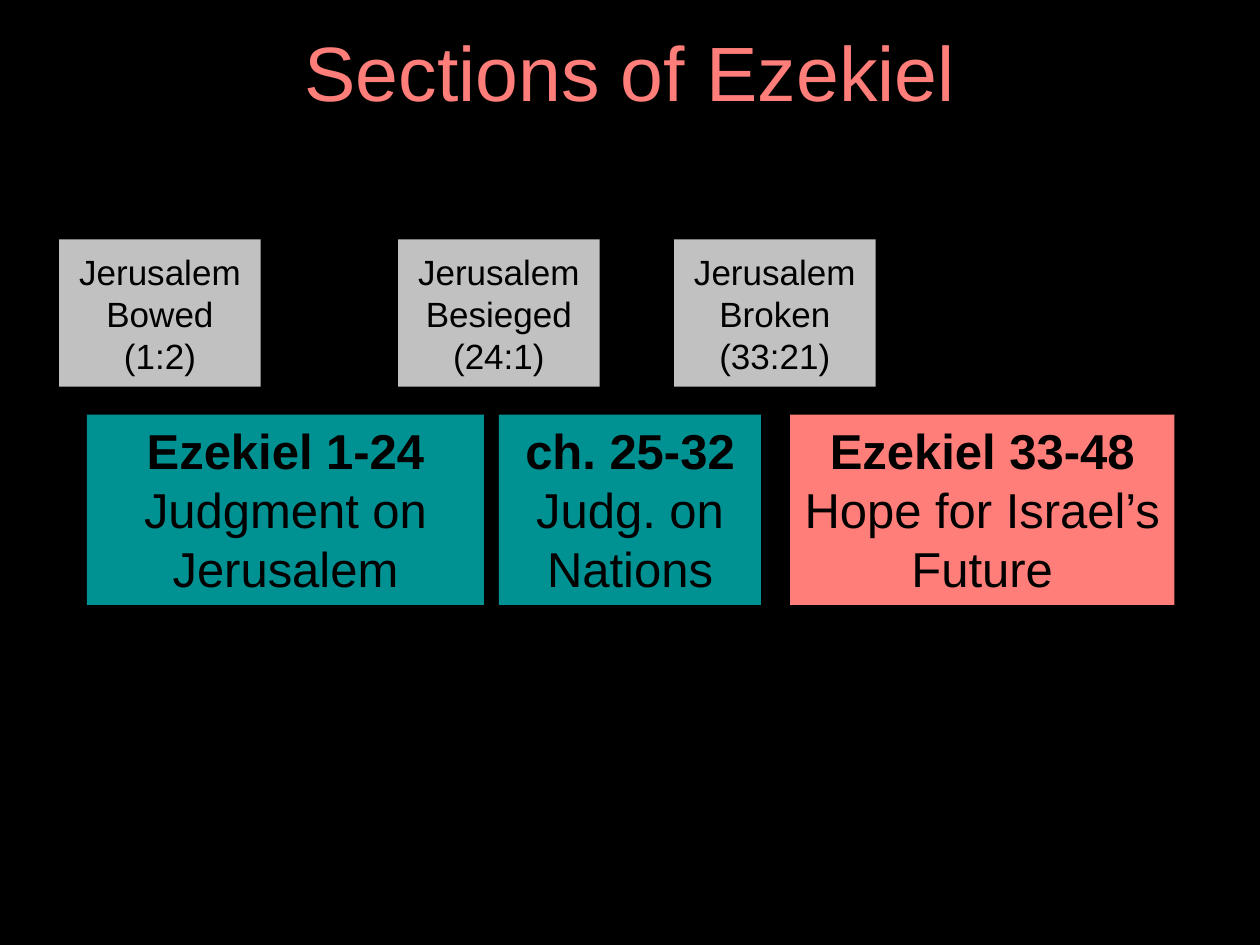
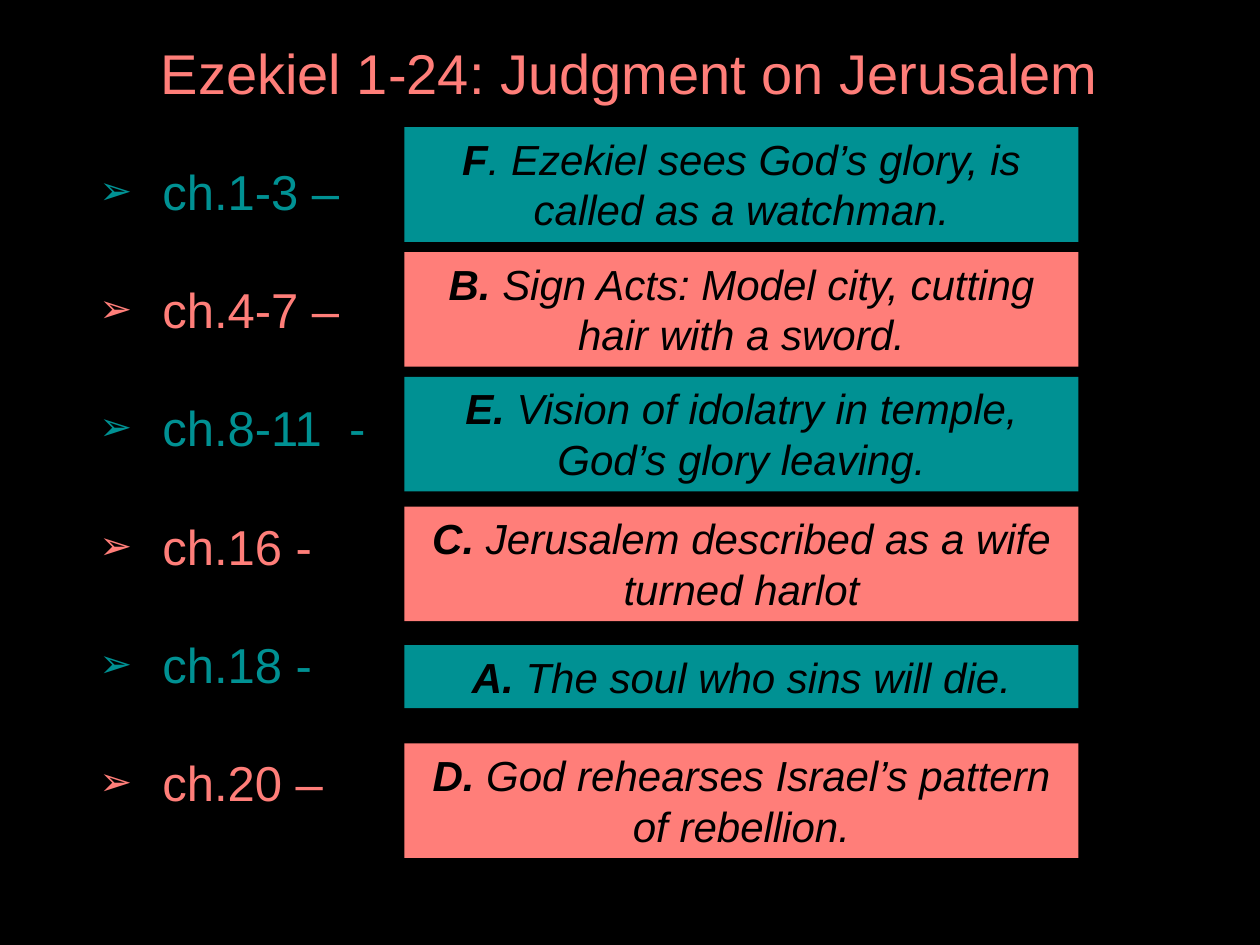
from dataclasses import dataclass
from itertools import cycle

from lxml.etree import SubElement
from pptx import Presentation
from pptx.dml.color import RGBColor
from pptx.enum.shapes import MSO_SHAPE
from pptx.enum.text import MSO_ANCHOR, MSO_AUTO_SIZE, PP_ALIGN
from pptx.oxml.ns import qn
from pptx.slide import Slide
from pptx.text.text import TextFrame, _Paragraph, _Run
from pptx.util import Inches, Pt

COLORS = {
    "black": "000000",
    "teal": "009193",
    "coral": "FF7E79",
    "grey": "C1C1C1",
}
FONT = "Arial"
CONTENT_LEFT, CONTENT_WIDTH = 0.69, 8.62


@dataclass
class Span:
    text: str
    bold: bool = False
    italic: bool = False


@dataclass
class Box:
    left: float
    top: float
    width: float
    height: float
    fill: str
    size: int
    lines: list[list[Span]]
    centred: bool = False


@dataclass
class Event:
    left: float
    name: str
    verse: str


@dataclass
class Section:
    left: float
    width: float
    fill: str
    chapters: str
    theme: str


@dataclass
class Passage:
    chapters: str
    top: float
    height: float
    letter: str
    summary: str


EVENTS = [
    Event(5.35, "Jerusalem Broken", "(33:21)"),
    Event(3.16, "Jerusalem Besieged", "(24:1)"),
    Event(0.47, "Jerusalem Bowed", "(1:2)"),
]
SECTIONS = [
    Section(0.69, 3.15, "teal", "Ezekiel 1-24", "Judgment on Jerusalem"),
    Section(3.96, 2.08, "teal", "ch. 25-32", "Judg. on Nations"),
    Section(6.27, 3.05, "coral", "Ezekiel 33-48", "Hope for Israel’s Future"),
]
PASSAGES = [
    Passage("ch.1-3 –", 1.01, 0.91, "F", ". Ezekiel sees God’s glory, is called as a watchman."),
    Passage("ch.4-7 –", 2, 0.91, "B. ", "Sign Acts: Model city, cutting hair with a sword."),
    Passage("ch.8-11  -", 2.99, 0.91, "E. ", "Vision of idolatry in temple, God’s glory leaving."),
    Passage("ch.16 -", 4.02, 0.91, "C. ", "Jerusalem described as a wife turned harlot"),
    Passage("ch.18 -", 5.12, 0.5, "A. ", "The soul who sins will die."),
    Passage("ch.20 –", 5.9, 0.91, "D. ", "God rehearses Israel’s pattern of rebellion."),
]


def rgb(name: str) -> RGBColor:
    return RGBColor.from_string(COLORS[name])


def format_run(run: _Run, size: int, color: str, bold: bool = False, italic: bool = False) -> None:
    run.font.name = FONT
    run.font.size = Pt(size)
    run.font.color.rgb = rgb(color)
    run.font.bold = bold
    run.font.italic = italic


def paragraph_at(text_frame: TextFrame, index: int) -> _Paragraph:
    """Return the paragraph a new frame already has, or add the next one."""
    return text_frame.add_paragraph() if index else text_frame.paragraphs[0]


def add_text_area(slide: Slide, top: float, height: float) -> TextFrame:
    shape = slide.shapes.add_textbox(
        Inches(CONTENT_LEFT), Inches(top), Inches(CONTENT_WIDTH), Inches(height)
    )
    shape.text_frame.word_wrap = True
    return shape.text_frame


def add_titled_slide(presentation: Presentation, title: str, size: int) -> Slide:
    slide = presentation.slides.add_slide(presentation.slide_layouts[6])
    slide.background.fill.solid()
    slide.background.fill.fore_color.rgb = rgb("black")
    text_frame = add_text_area(slide, 0.16, 0.9)
    text_frame.vertical_anchor = MSO_ANCHOR.MIDDLE
    text_frame.text = title
    paragraph = text_frame.paragraphs[0]
    paragraph.alignment = PP_ALIGN.CENTER
    paragraph.line_spacing = 0.9
    format_run(paragraph.runs[0], size, "coral")
    return slide


def add_box(slide: Slide, box: Box) -> None:
    shape = slide.shapes.add_shape(
        MSO_SHAPE.RECTANGLE,
        Inches(box.left), Inches(box.top), Inches(box.width), Inches(box.height),
    )
    shape.shadow.inherit = False
    shape.fill.solid()
    shape.fill.fore_color.rgb = rgb(box.fill)
    shape.line.fill.background()
    text_frame = shape.text_frame
    text_frame.word_wrap = True
    if box.centred:
        text_frame.vertical_anchor = MSO_ANCHOR.MIDDLE
    else:
        text_frame.vertical_anchor = MSO_ANCHOR.TOP
        text_frame.auto_size = MSO_AUTO_SIZE.SHAPE_TO_FIT_TEXT
    for index, spans in enumerate(box.lines):
        paragraph = paragraph_at(text_frame, index)
        paragraph.alignment = PP_ALIGN.CENTER
        for span in spans:
            run = paragraph.add_run()
            run.text = span.text
            format_run(run, box.size, "black", span.bold, span.italic)


def add_arrow_bullet(paragraph: _Paragraph) -> None:
    properties = paragraph._p.get_or_add_pPr()
    properties.set("marL", str(Inches(0.5)))
    properties.set("indent", str(-Inches(0.5)))
    SubElement(properties, qn("a:buSzPct"), val="80000")
    SubElement(properties, qn("a:buFont"), typeface=FONT)
    SubElement(properties, qn("a:buChar"), char="➢")


def build_sections_slide(presentation: Presentation) -> None:
    slide = add_titled_slide(presentation, "Sections of Ezekiel", 44)
    for section in SECTIONS:
        lines = [[Span(section.chapters, bold=True)], [Span(section.theme)]]
        add_box(slide, Box(section.left, 3.29, section.width, 1.51, section.fill, 28, lines))
    for event in EVENTS:
        lines = [[Span(event.name)], [Span(event.verse)]]
        add_box(slide, Box(event.left, 1.9, 1.6, 1.17, "grey", 20, lines, centred=True))


def build_judgment_slide(presentation: Presentation) -> None:
    slide = add_titled_slide(presentation, "Ezekiel 1-24: Judgment on Jerusalem", 32)
    chapter_list = add_text_area(slide, 1.23, 6.16)
    for index, (passage, color) in enumerate(zip(PASSAGES, cycle(["teal", "coral"]))):
        paragraph = paragraph_at(chapter_list, index)
        paragraph.text = passage.chapters
        add_arrow_bullet(paragraph)
        paragraph.space_before = Pt(4 if index else 0)
        paragraph.space_after = Pt(30)
        format_run(paragraph.runs[0], 28, color)
        spans = [
            Span(passage.letter, bold=True, italic=True),
            Span(passage.summary, italic=True),
        ]
        add_box(slide, Box(3.21, passage.top, 5.35, passage.height, color, 24, [spans]))


def main() -> None:
    presentation = Presentation()
    presentation.slide_width = Inches(10)
    presentation.slide_height = Inches(7.5)
    build_sections_slide(presentation)
    build_judgment_slide(presentation)
    presentation.save("out.pptx")


if __name__ == "__main__":
    main()
